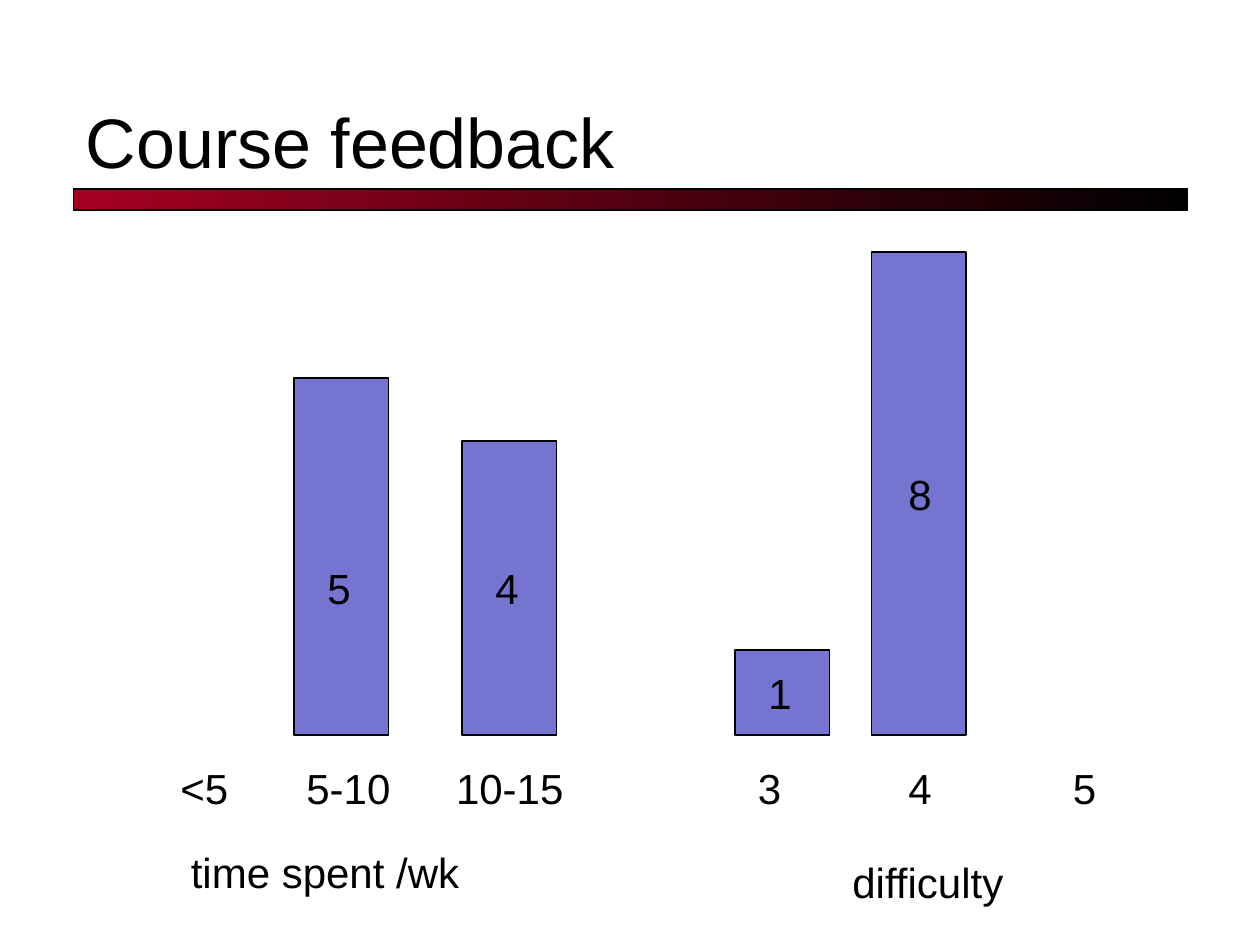
"""Build the course feedback slide with its two hand-drawn bar diagrams."""

from dataclasses import dataclass

from pptx import Presentation
from pptx.dml.color import RGBColor
from pptx.enum.shapes import MSO_SHAPE as Preset
from pptx.enum.text import MSO_ANCHOR as Anchor, MSO_AUTO_SIZE as AutoSize
from pptx.shapes.autoshape import Shape
from pptx.slide import Slide
from pptx.util import Pt

BLACK = RGBColor(0x00, 0x00, 0x00)
CRIMSON = RGBColor(0xA5, 0x00, 0x21)
PERIWINKLE = RGBColor(0x75, 0x75, 0xD1)

FONT = "Arial"
BASELINE = 420
BAR_WIDTH = 54
LABEL_HEIGHT = 36
CATEGORY_TOP = 432
DIGIT_WIDTH = 28


@dataclass(frozen=True)
class Label:
    text: str
    left: float
    top: float
    width: float = DIGIT_WIDTH


@dataclass(frozen=True)
class Bar:
    left: float
    top: float
    value: Label


BARS = (
    Bar(498, 144, Label("8", 512, 264)),
    Bar(420, 371.5, Label("1", 432, 378)),
    Bar(264, 252, Label("4", 276, 318)),
    Bar(168, 216, Label("5", 180, 318)),
)

CATEGORIES = (
    Label("<5", 96, CATEGORY_TOP, 42.5),
    Label("5-10", 168, CATEGORY_TOP, 63),
    Label("10-15", 253.5, CATEGORY_TOP, 76),
    Label("3", 426, CATEGORY_TOP),
    Label("4", 512, CATEGORY_TOP),
    Label("5", 606, CATEGORY_TOP),
)

AXIS_TITLES = (
    Label("time spent /wk", 102, 480, 169),
    Label("difficulty", 480, 486, 101.5),
)


def add_text(slide: Slide, label: Label, height: float, size: float) -> Shape:
    shape = slide.shapes.add_textbox(
        Pt(label.left), Pt(label.top), Pt(label.width), Pt(height)
    )
    run = shape.text_frame.paragraphs[0].add_run()
    run.text = label.text
    run.font.name = FONT
    run.font.size = Pt(size)
    run.font.color.rgb = BLACK
    return shape


def add_title(slide: Slide, label: Label) -> None:
    frame = add_text(slide, label, 78, 40).text_frame
    frame.word_wrap = True
    frame.vertical_anchor = Anchor.BOTTOM


def add_label(slide: Slide, label: Label) -> None:
    frame = add_text(slide, label, LABEL_HEIGHT, 24).text_frame
    frame.word_wrap = False
    frame.auto_size = AutoSize.SHAPE_TO_FIT_TEXT


def add_rectangle(
    slide: Slide, left: float, top: float, width: float, height: float
) -> Shape:
    shape = slide.shapes.add_shape(
        Preset.RECTANGLE, Pt(left), Pt(top), Pt(width), Pt(height)
    )
    shape.shadow.inherit = False
    shape.line.color.rgb = BLACK
    shape.line.width = Pt(0.75)
    return shape


def add_title_rule(slide: Slide) -> None:
    fill = add_rectangle(slide, 42, 108, 636.5, 12).fill
    fill.gradient()
    fill.gradient_angle = 0
    for stop, color, position in zip(fill.gradient_stops, (CRIMSON, BLACK), (0, 1)):
        stop.color.rgb = color
        stop.position = position


def add_bar(slide: Slide, bar: Bar) -> None:
    shape = add_rectangle(slide, bar.left, bar.top, BAR_WIDTH, BASELINE - bar.top)
    shape.fill.solid()
    shape.fill.fore_color.rgb = PERIWINKLE
    add_label(slide, bar.value)


def main() -> None:
    presentation = Presentation()
    presentation.slide_width = Pt(720)
    presentation.slide_height = Pt(540)
    slide = presentation.slides.add_slide(presentation.slide_layouts[6])

    add_title_rule(slide)
    add_title(slide, Label("Course feedback", 42, 30, 636))
    for bar in BARS:
        add_bar(slide, bar)
    for label in CATEGORIES + AXIS_TITLES:
        add_label(slide, label)

    presentation.save("out.pptx")


if __name__ == "__main__":
    main()
